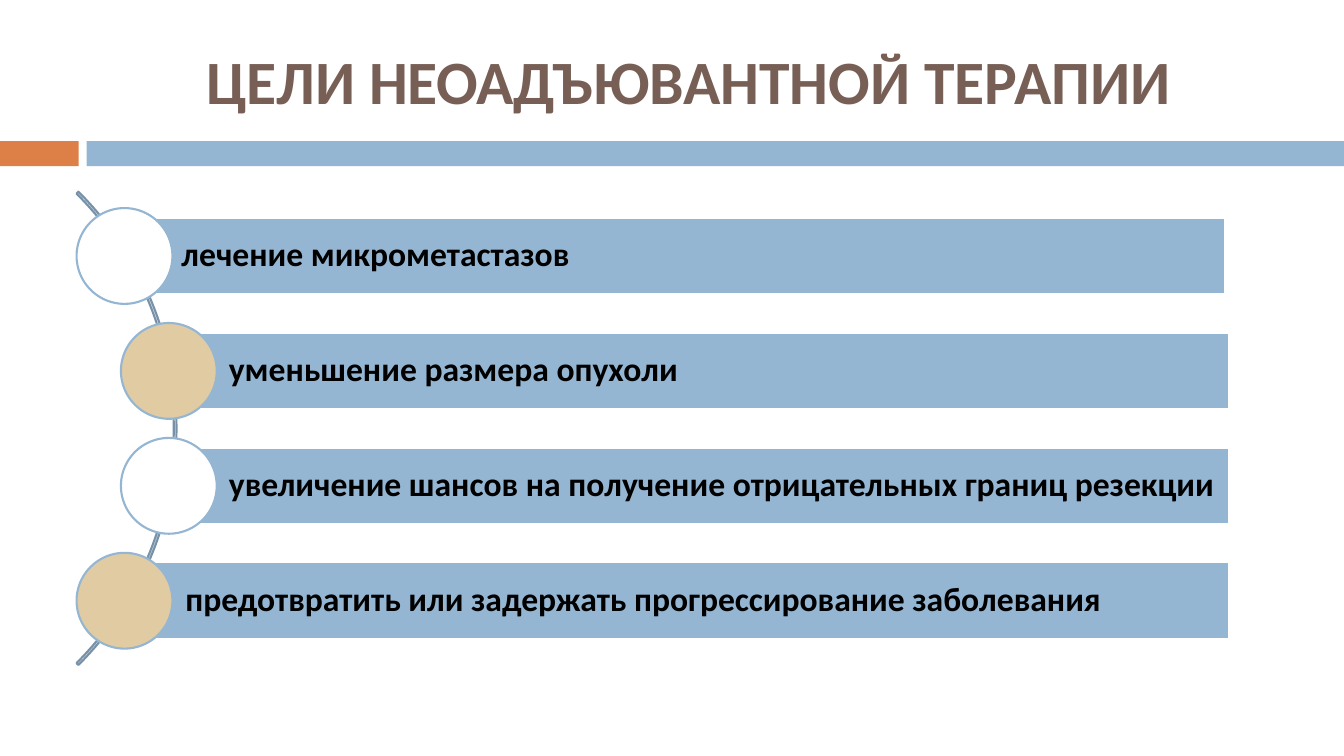
import pptx
import pptx.util
import pptx.dml.color
import pptx.enum.shapes
import pptx.enum.text
from dataclasses import dataclass

Kind = pptx.enum.shapes.MSO_SHAPE
Align = pptx.enum.text.PP_ALIGN
Anchor = pptx.enum.text.MSO_ANCHOR


@dataclass(frozen=True)
class Theme:
    font: str = "Calibri"
    blue: str = "94B6D2"
    orange: str = "DD8047"
    brown: str = "775F55"
    slate: str = "7792A8"
    sand: str = "E0CBA3"
    white: str = "FFFFFF"
    black: str = "000000"
    head: int = 44
    body: int = 24
    line: float = 1.5


@dataclass(frozen=True)
class Box:
    """Shares of the slide's width and height, in percent."""
    left: float
    top: float
    wide: float
    high: float


@dataclass(frozen=True)
class Goal:
    text: str
    left: float
    right: float
    dot: float
    fill: str


THEME = Theme()
WIDE = pptx.util.Inches(13.33)
HIGH = pptx.util.Inches(7.5)
TOP = 28.8
STEP = 15.2
BAR = 10.13
DOT_WIDE = 7.13
DOT_HIGH = 12.67
INDENT = 4.5
PAD = 0.53

TITLE = Box(6.68, 3.33, 89.2, 14.4)
STRIPS = (
    (Box(0, 18.67, 5.85, 3.33), THEME.orange),
    (Box(6.45, 18.67, 93.55, 3.33), THEME.blue),
)
ARC = Box(-36.68, 12.4, 49.81, 88.53)
GOALS = (
    Goal("лечение микрометастазов", 9, 91.15, 5.7, THEME.white),
    Goal("уменьшение размера опухоли", 12.53, 91.45, 9, THEME.sand),
    Goal("увеличение шансов на получение отрицательных границ резекции",
         12.53, 91.45, 9, THEME.white),
    Goal("предотвратить или задержать прогрессирование заболевания",
         9.3, 91.45, 5.7, THEME.sand),
)


def across(share: float) -> int:
    return round(WIDE * share / 100)


def down(share: float) -> int:
    return round(HIGH * share / 100)


def place(box: Box) -> tuple[int, int, int, int]:
    return across(box.left), down(box.top), across(box.wide), down(box.high)


def tint(code: str) -> pptx.dml.color.RGBColor:
    return pptx.dml.color.RGBColor.from_string(code)


def draw(slide, kind: Kind, box: Box, fill: str = "", line: str = ""):
    shape = slide.shapes.add_shape(kind, *place(box))
    shape.shadow.inherit = False
    if fill:
        shape.fill.solid()
        shape.fill.fore_color.rgb = tint(fill)
    else:
        shape.fill.background()
    if line:
        shape.line.color.rgb = tint(line)
        shape.line.width = pptx.util.Pt(THEME.line)
    else:
        shape.line.fill.background()
    return shape


def write(shape, text: str, size: int, color: str, align: Align):
    frame = shape.text_frame
    frame.word_wrap = True
    frame.vertical_anchor = Anchor.MIDDLE
    para = frame.paragraphs[0]
    para.alignment = align
    run = para.add_run()
    run.text = text
    run.font.name = THEME.font
    run.font.size = pptx.util.Pt(size)
    run.font.bold = True
    run.font.color.rgb = tint(color)
    return frame


def add_goal(slide, goal: Goal, row: int) -> None:
    top = TOP + row * STEP
    box = Box(goal.left, top, goal.right - goal.left, BAR)
    bar = draw(slide, Kind.RECTANGLE, box, THEME.blue, THEME.white)
    frame = write(bar, goal.text, THEME.body, THEME.black, Align.LEFT)
    frame.margin_left = across(INDENT)
    frame.margin_right = frame.margin_top = frame.margin_bottom = across(PAD)
    frame.paragraphs[0].line_spacing = 0.9
    dot = Box(goal.dot, top + (BAR - DOT_HIGH) / 2, DOT_WIDE, DOT_HIGH)
    draw(slide, Kind.OVAL, dot, goal.fill, THEME.blue)


def main() -> None:
    deck = pptx.Presentation()
    deck.slide_width, deck.slide_height = WIDE, HIGH
    slide = deck.slides.add_slide(deck.slide_layouts[6])
    for box, fill in STRIPS:
        draw(slide, Kind.RECTANGLE, box, fill)
    title = slide.shapes.add_textbox(*place(TITLE))
    write(title, "ЦЕЛИ НЕОАДЪЮВАНТНОЙ ТЕРАПИИ", THEME.head, THEME.brown,
          Align.CENTER)
    arc = draw(slide, Kind.BLOCK_ARC, ARC, line=THEME.slate)
    for spot, value in enumerate((189, 27, 0.004)):
        arc.adjustments[spot] = value
    for row, goal in enumerate(GOALS):
        add_goal(slide, goal, row)
    deck.save("out.pptx")


if __name__ == "__main__":
    main()
